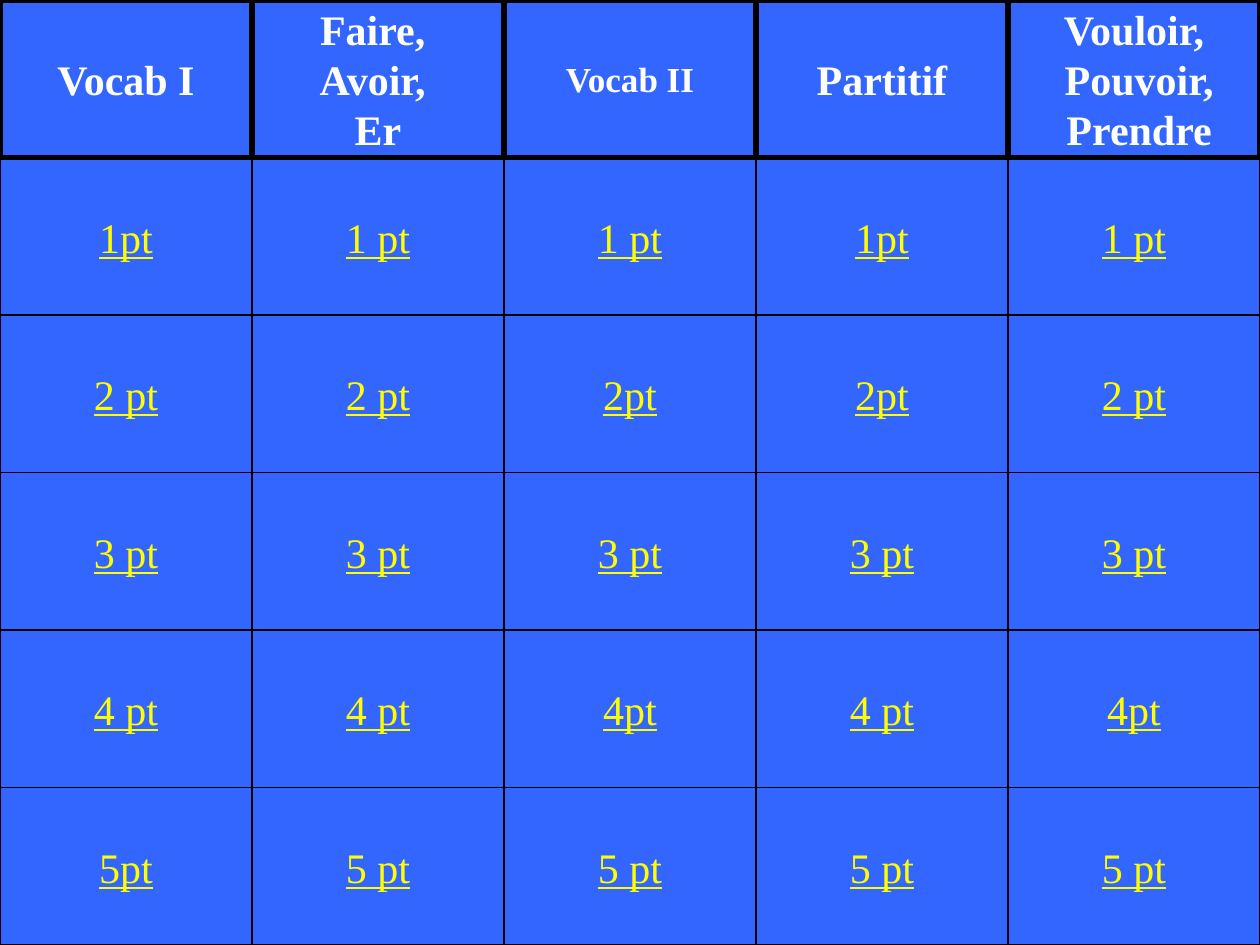
from dataclasses import dataclass

from pptx import Presentation
from pptx import util as u
from pptx.dml.color import RGBColor
from pptx.enum import shapes, text

# Content: one column per category, heading lines first, then the point values
CATEGORIES = [
    (["Vocab I"], ["1pt", "2 pt", "3 pt", "4 pt", "5pt"]),
    (["Faire, ", "Avoir, ", "Er"], ["1 pt", "2 pt", "3 pt", "4 pt", "5 pt"]),
    (["Vocab II"], ["1 pt", "2pt", "3 pt", "4pt", "5 pt"]),
    (["Partitif"], ["1pt", "2pt", "3 pt", "4 pt", "5 pt"]),
    (["Vouloir,", " Pouvoir,", " Prendre"], ["1 pt", "2 pt", "3 pt", "4pt", "5 pt"]),
]
SMALLER_HEADINGS = {"Vocab II"}


@dataclass(frozen=True)
class Theme:
    font: str = "Times New Roman"
    board: RGBColor = RGBColor(0x33, 0x66, 0xFF)
    border: RGBColor = RGBColor(0, 0, 0)
    heading: RGBColor = RGBColor(0xFF, 0xFF, 0xFF)
    points: RGBColor = RGBColor(0xFF, 0xFF, 0)
    size: int = 24
    small_size: int = 20
    heading_line: float = 3
    points_line: float = 0.75


THEME = Theme()
PAGE_WIDTH, PAGE_HEIGHT = u.Cm(25.4), u.Cm(19.05)
CELL_WIDTH = PAGE_WIDTH // len(CATEGORIES)
CELL_HEIGHT = PAGE_HEIGHT // (1 + len(CATEGORIES[0][1]))


def add_cell(page, kind, column, row, lines, line_width, color, size,
             bold=False, underline=False):
    """Add one board cell at a grid position."""
    box = page.shapes.add_shape(kind, column * CELL_WIDTH, row * CELL_HEIGHT,
                                CELL_WIDTH, CELL_HEIGHT)
    box.shadow.inherit = False
    box.fill.solid()
    box.fill.fore_color.rgb = THEME.board
    box.line.color.rgb = THEME.border
    box.line.width = u.Pt(line_width)

    frame = box.text_frame
    frame.word_wrap = False
    frame.vertical_anchor = text.MSO_ANCHOR.MIDDLE
    frame.text = "\n".join(lines)
    for para in frame.paragraphs:
        para.alignment = text.PP_ALIGN.CENTER
        para.font.name = THEME.font
        para.font.size = u.Pt(size)
        para.font.color.rgb = color
        para.font.bold = bold
        para.font.underline = underline


def main():
    deck = Presentation()
    deck.slide_width, deck.slide_height = PAGE_WIDTH, PAGE_HEIGHT
    page = deck.slides.add_slide(deck.slide_layouts.get_by_name("Blank"))
    page.background.fill.solid()
    page.background.fill.fore_color.rgb = THEME.board

    # Point buttons
    for column, (_, points) in enumerate(CATEGORIES):
        for row, label in enumerate(points, start=1):
            add_cell(page, shapes.MSO_SHAPE.ACTION_BUTTON_CUSTOM, column, row, [label],
                     THEME.points_line, THEME.points, THEME.size, underline=True)

    # Category headings, in front so that their thick borders show
    for column, (lines, _) in enumerate(CATEGORIES):
        size = THEME.small_size if lines[0] in SMALLER_HEADINGS else THEME.size
        add_cell(page, shapes.MSO_SHAPE.RECTANGLE, column, 0, lines,
                 THEME.heading_line, THEME.heading, size, bold=True)

    deck.save("out.pptx")


if __name__ == "__main__":
    main()
